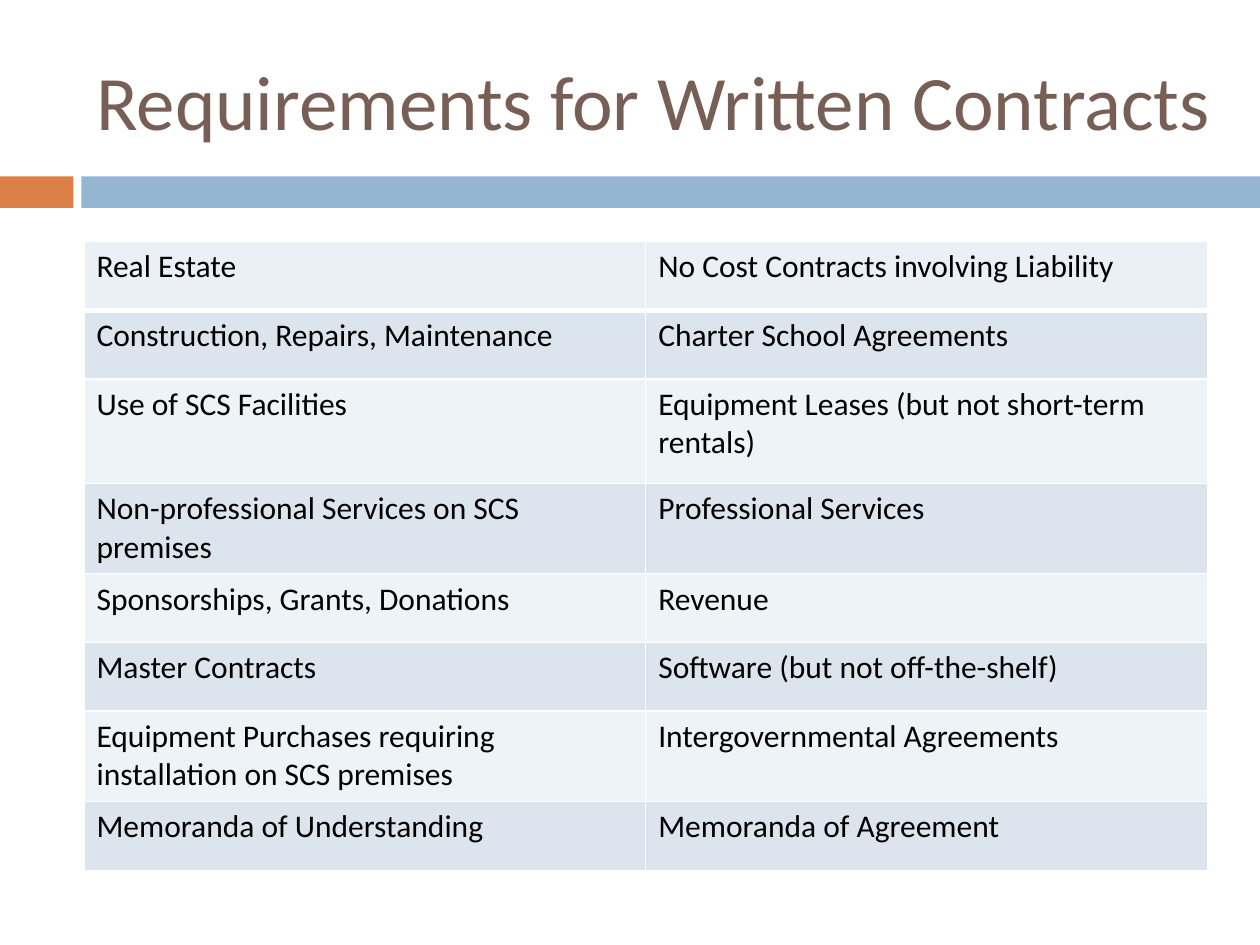
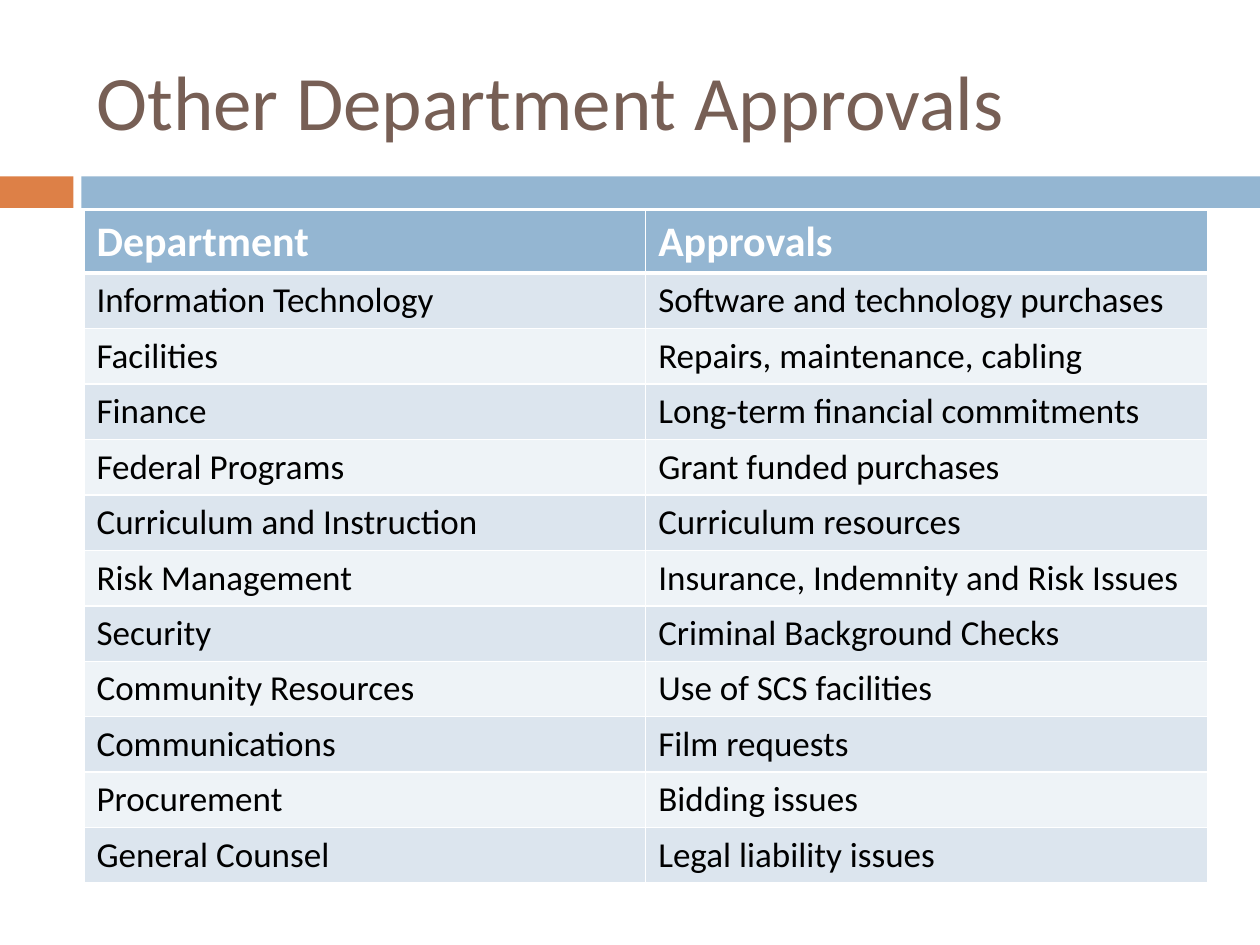
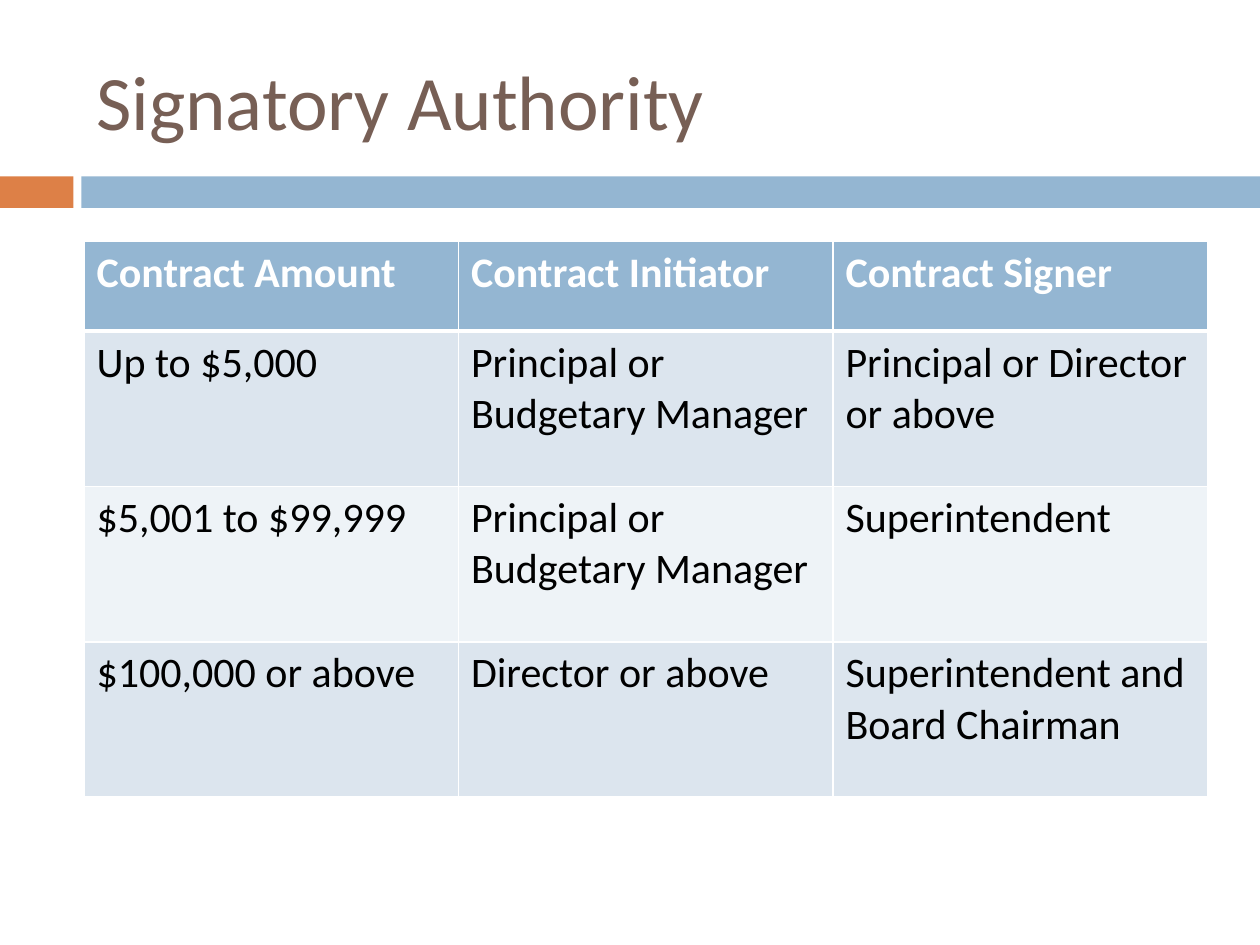
import dataclasses

import pptx
import pptx.dml.color
import pptx.enum.shapes
import pptx.enum.text
import pptx.oxml
import pptx.oxml.ns
import pptx.presentation
import pptx.slide
import pptx.table
import pptx.text.text
import pptx.util

Pt = pptx.util.Pt

FONT = "Calibri"
WHITE, BLACK, BROWN = "FFFFFF", "000000", "775F55"
BLUE, RUST = "94B6D2", "DD8047"
BANDS = ("EEF3F7", "DCE5EE")
PALE = "EAF0F6"
LEFT, WIDTH = 48, 642
SPAN = 660  # title width, enough for the longest title on one line


@dataclasses.dataclass(frozen=True)
class Bar:
    left: float
    width: float
    fill: str


@dataclasses.dataclass(frozen=True)
class Style:
    size: float
    color: str = BLACK
    bold: bool = False


@dataclasses.dataclass(frozen=True)
class Page:
    title: str
    top: float
    rows: list[tuple[str, ...]]
    heights: list[float]
    body: Style
    head: Style
    fill: str = BLUE  # fill of the first row


BARS = (Bar(0, 42, RUST), Bar(46.5, 673.5, BLUE))
TITLE = Style(44, BROWN)
HEAD = Style(24, WHITE, True)

PAGES = [
    Page(
        "Requirements for Written Contracts",
        138,
        [
            ("Real Estate", "No Cost Contracts involving Liability"),
            ("Construction, Repairs, Maintenance", "Charter School Agreements"),
            ("Use of SCS Facilities", "Equipment Leases (but not short-term rentals)"),
            ("Non-professional Services on SCS premises", "Professional Services"),
            ("Sponsorships, Grants, Donations", "Revenue"),
            ("Master Contracts", "Software (but not off-the-shelf)"),
            ("Equipment Purchases requiring installation on SCS premises",
             "Intergovernmental Agreements"),
            ("Memoranda of Understanding", "Memoranda of Agreement"),
        ],
        [39.3, 39.3, 59.6, 51.7, 39.3, 39.3, 51.7, 39.3],
        body=Style(18),
        head=Style(18),
        fill=PALE,
    ),
    Page(
        "Other Department Approvals",
        120,
        [
            ("Department", "Approvals"),
            ("Information Technology", "Software and technology purchases"),
            ("Facilities", "Repairs, maintenance, cabling"),
            ("Finance", "Long-term financial commitments"),
            ("Federal Programs", "Grant funded purchases"),
            ("Curriculum and Instruction", "Curriculum resources"),
            ("Risk Management", "Insurance, Indemnity and Risk Issues"),
            ("Security", "Criminal Background Checks"),
            ("Community Resources", "Use of SCS facilities"),
            ("Communications", "Film requests"),
            ("Procurement", "Bidding issues"),
            ("General Counsel", "Legal liability issues"),
        ],
        [36] + [31.7] * 11,
        body=Style(20),
        head=HEAD,
    ),
    Page(
        "Signatory Authority",
        138,
        [
            ("Contract Amount", "Contract Initiator", "Contract Signer"),
            ("Up to $5,000", "Principal or Budgetary Manager",
             "Principal or Director or above"),
            ("$5,001 to $99,999", "Principal or Budgetary Manager", "Superintendent"),
            ("$100,000 or above", "Director or above",
             "Superintendent and Board Chairman"),
        ],
        [51.2] + [88.8] * 3,
        body=Style(24),
        head=HEAD,
    ),
]


def rgb(code: str) -> pptx.dml.color.RGBColor:
    return pptx.dml.color.RGBColor.from_string(code)


def write(frame: pptx.text.text.TextFrame, text: str, style: Style) -> None:
    frame.text = text
    frame.word_wrap = True
    font = frame.paragraphs[0].font
    font.name, font.size, font.bold = FONT, Pt(style.size), style.bold
    font.color.rgb = rgb(style.color)


def add_bar(slide: pptx.slide.Slide, bar: Bar) -> None:
    shape = slide.shapes.add_shape(
        pptx.enum.shapes.MSO_SHAPE.RECTANGLE,
        Pt(bar.left), Pt(100.8), Pt(bar.width), Pt(18),
    )
    shape.shadow.inherit = False
    shape.fill.solid()
    shape.fill.fore_color.rgb = rgb(bar.fill)
    shape.line.fill.background()


def add_title(slide: pptx.slide.Slide, text: str) -> None:
    box = slide.shapes.add_textbox(Pt(LEFT), Pt(18), Pt(SPAN), Pt(78))
    write(box.text_frame, text, TITLE)
    box.text_frame.vertical_anchor = pptx.enum.text.MSO_ANCHOR.MIDDLE


def set_edges(cell: pptx.table._Cell, row: int) -> None:
    """Draw white cell borders, with a thick rule below the first row."""
    props = cell._tc.get_or_add_tcPr()
    widths = {"L": 1, "R": 1, "T": 3 if row == 1 else 1, "B": 3 if row == 0 else 1}
    for spot, (side, width) in enumerate(widths.items()):
        line = pptx.oxml.parse_xml(
            f'<a:ln{side} {pptx.oxml.ns.nsdecls("a")} w="{Pt(width)}">'
            f'<a:solidFill><a:srgbClr val="{WHITE}"/></a:solidFill></a:ln{side}>'
        )
        props.insert(spot, line)


def add_grid(slide: pptx.slide.Slide, page: Page) -> None:
    count = len(page.rows[0])
    table = slide.shapes.add_table(
        len(page.rows), count,
        Pt(LEFT), Pt(page.top), Pt(WIDTH), Pt(sum(page.heights)),
    ).table
    table.first_row = page.head.bold
    table.horz_banding = False
    for column in table.columns:
        column.width = Pt(WIDTH / count)
    for row, (texts, height) in enumerate(zip(page.rows, page.heights)):
        table.rows[row].height = Pt(height)
        for col, text in enumerate(texts):
            cell = table.cell(row, col)
            write(cell.text_frame, text, page.body if row else page.head)
            cell.fill.solid()
            cell.fill.fore_color.rgb = rgb(BANDS[row % 2] if row else page.fill)
            set_edges(cell, row)


def add_page(deck: pptx.presentation.Presentation, page: Page) -> None:
    slide = deck.slides.add_slide(deck.slide_layouts[6])
    for bar in BARS:
        add_bar(slide, bar)
    add_title(slide, page.title)
    add_grid(slide, page)


def main() -> None:
    deck = pptx.Presentation()
    deck.slide_width, deck.slide_height = Pt(720), Pt(540)
    for page in PAGES:
        add_page(deck, page)
    deck.save("out.pptx")


if __name__ == "__main__":
    main()
